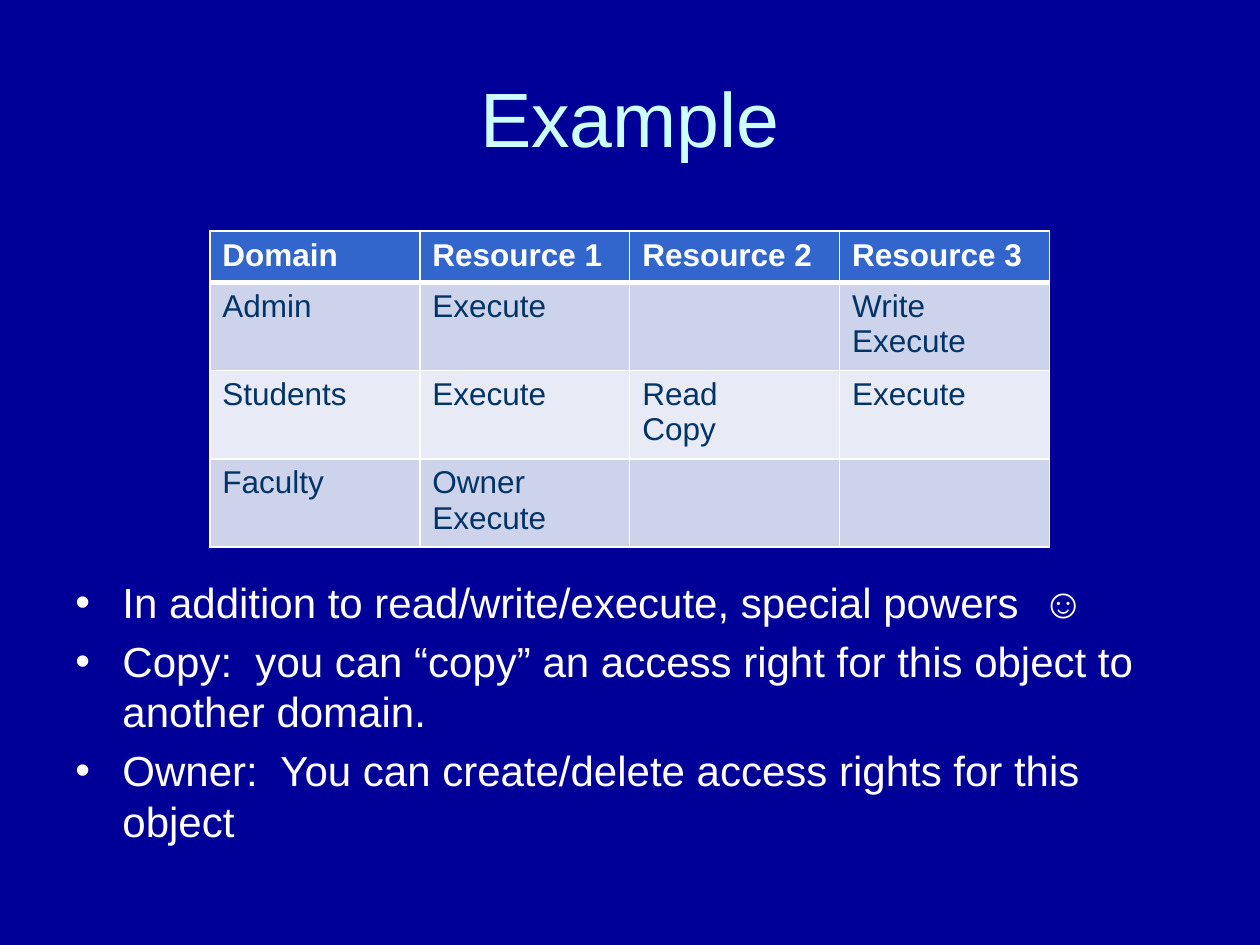
from lxml.etree import SubElement
from pptx import Presentation
from pptx.dml.color import RGBColor
from pptx.enum.text import MSO_ANCHOR, PP_ALIGN
from pptx.oxml.ns import qn
from pptx.util import Cm, Pt

NAVY = RGBColor(0x00, 0x00, 0x99)
PALE_CYAN = RGBColor(0xCC, 0xFF, 0xFF)
WHITE = RGBColor(0xFF, 0xFF, 0xFF)
HEADER_BLUE = RGBColor(0x33, 0x66, 0xCC)
DARK_BLUE = RGBColor(0x00, 0x33, 0x66)
BAND_DARK = RGBColor(0xCE, 0xD3, 0xEC)
BAND_LIGHT = RGBColor(0xE8, 0xEA, 0xF6)

ACCESS_MATRIX = [
    [["Domain"], ["Resource 1"], ["Resource 2"], ["Resource 3"]],
    [["Admin"], ["Execute"], [], ["Write", "Execute"]],
    [["Students"], ["Execute"], ["Read", "Copy"], ["Execute"]],
    [["Faculty"], ["Owner", "Execute"], [], []],
]
SPECIAL_POWERS = [
    "In addition to read/write/execute, special powers  ☺",
    "Copy:  you can “copy” an access right for this object to another domain.",
    "Owner:  You can create/delete access rights for this object",
]


class SlideBuilder:
    font_name = "Arial"
    title_size = Pt(44)
    body_size = Pt(24)
    table_size = Pt(18)

    def __init__(self, deck):
        self.page = deck.slides.add_slide(deck.slide_layouts[5])
        fill = self.page.background.fill
        fill.solid()
        fill.fore_color.rgb = NAVY

    def add_run(self, para, text, size, color, bold=False):
        span = para.add_run()
        span.text = text
        span.font.name = self.font_name
        span.font.size = size
        span.font.bold = bold
        span.font.color.rgb = color

    def add_paragraphs(self, frame, lines, size, color, bold=False):
        for index, line in enumerate(lines):
            para = frame.add_paragraph() if index else frame.paragraphs[0]
            self.add_run(para, line, size, color, bold)

    def add_title(self, text, left, top, width, height):
        title = self.page.shapes.title
        title.left, title.top, title.width, title.height = left, top, width, height
        title.text_frame.vertical_anchor = MSO_ANCHOR.MIDDLE
        para = title.text_frame.paragraphs[0]
        para.alignment = PP_ALIGN.CENTER
        self.add_run(para, text, self.title_size, PALE_CYAN)

    def add_cell_borders(self, cell, top, bottom):
        properties = cell._tc.get_or_add_tcPr()
        widths = {"a:lnL": Pt(1), "a:lnR": Pt(1), "a:lnT": top, "a:lnB": bottom}
        for tag, width in widths.items():
            line = SubElement(properties, qn(tag), w=str(width))
            fill = SubElement(line, qn("a:solidFill"))
            SubElement(fill, qn("a:srgbClr"), val=str(WHITE))

    def add_table(self, rows, left, top, width, row_heights):
        shape = self.page.shapes.add_table(
            len(rows), len(rows[0]), left, top, width, sum(row_heights)
        )
        table = shape.table
        for row_index, (row, height) in enumerate(zip(rows, row_heights)):
            table.rows[row_index].height = height
            header = row_index == 0
            band = BAND_DARK if row_index % 2 else BAND_LIGHT
            for column_index, lines in enumerate(row):
                cell = table.cell(row_index, column_index)
                self.add_cell_borders(
                    cell,
                    top=Pt(3 if row_index == 1 else 1),
                    bottom=Pt(3 if header else 1),
                )
                cell.fill.solid()
                cell.fill.fore_color.rgb = HEADER_BLUE if header else band
                color = WHITE if header else DARK_BLUE
                self.add_paragraphs(
                    cell.text_frame, lines, self.table_size, color, header
                )

    def add_bullets(self, lines, left, top, width, height):
        box = self.page.shapes.add_textbox(left, top, width, height)
        frame = box.text_frame
        frame.word_wrap = True
        self.add_paragraphs(frame, lines, self.body_size, WHITE)
        indent = Cm(0.95)
        for para in frame.paragraphs:
            para.space_before = Pt(4.8)
            properties = para._p.get_or_add_pPr()
            properties.set("marL", str(indent))
            properties.set("indent", str(-indent))
            SubElement(properties, qn("a:buFont"), typeface=self.font_name)
            SubElement(properties, qn("a:buChar"), char="•")


def main():
    deck = Presentation()
    deck.slide_width, deck.slide_height = Cm(25.4), Cm(19.05)
    builder = SlideBuilder(deck)
    builder.add_title("Example", Cm(1.27), Cm(0.76), Cm(22.86), Cm(3.18))
    builder.add_table(
        ACCESS_MATRIX, Cm(4.23), Cm(4.66), Cm(16.93), [Cm(1.03)] + [Cm(1.78)] * 3
    )
    builder.add_bullets(SPECIAL_POWERS, Cm(1.27), Cm(11.5), Cm(22.86), Cm(5.52))
    deck.save("out.pptx")


if __name__ == "__main__":
    main()
